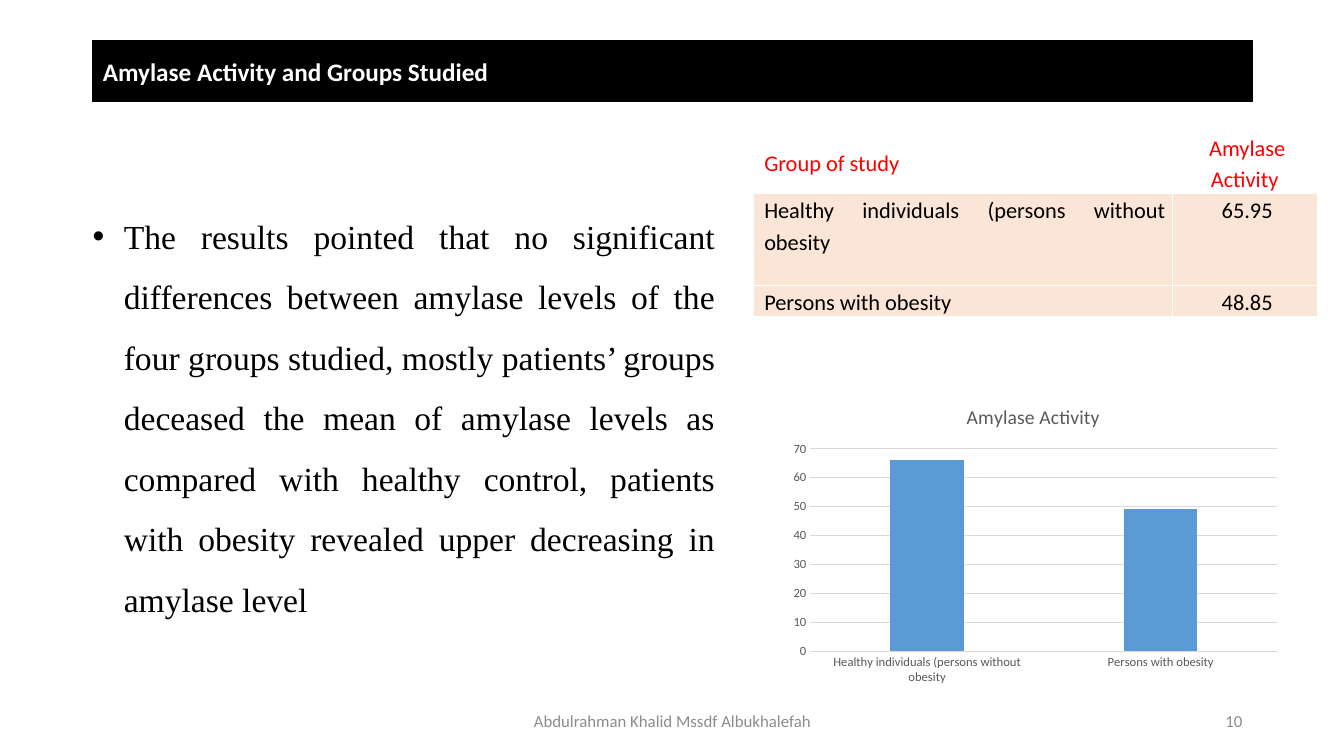
import pptx
import pptx.chart.data
import pptx.dml.color
import pptx.enum.chart
import pptx.enum.text
import pptx.oxml
import pptx.oxml.ns
import pptx.util
from dataclasses import dataclass

Inches = pptx.util.Inches
Pt = pptx.util.Pt
Align = pptx.enum.text.PP_ALIGN
Anchor = pptx.enum.text.MSO_ANCHOR


@dataclass(frozen=True)
class Theme:
    sans: str = "Calibri"
    serif: str = "Times New Roman"
    black: str = "000000"
    white: str = "FFFFFF"
    red: str = "FF0000"
    peach: str = "FBE5D6"
    blue: str = "5B9BD5"
    grid: str = "D9D9D9"
    label: str = "595959"
    footer: str = "8C8C8C"
    title_size: float = 18
    body_size: float = 24
    table_size: float = 16
    chart_title_size: float = 14
    chart_size: float = 10
    axis_size: float = 9
    footer_size: float = 12


def rgb(color):
    return pptx.dml.color.RGBColor.from_string(color)


def style_font(font, size, color, name, bold=False):
    font.size = Pt(size)
    font.color.rgb = rgb(color)
    font.name = name
    font.bold = bold


def style_line(line, color, width):
    line.color.rgb = rgb(color)
    line.width = Pt(width)


class SlideBuilder:
    def __init__(self, presentation, theme):
        self.theme = theme
        self.slide = presentation.slides.add_slide(presentation.slide_layouts[5])

    def title(self, text, box):
        heading = self.slide.shapes.title
        heading.left, heading.top, heading.width, heading.height = map(Inches, box)
        heading.fill.solid()
        heading.fill.fore_color.rgb = rgb(self.theme.black)
        style_line(heading.line, self.theme.black, 1)
        heading.text_frame.text = text
        heading.text_frame.vertical_anchor = Anchor.MIDDLE
        paragraph = heading.text_frame.paragraphs[0]
        paragraph.alignment = Align.LEFT
        style_font(paragraph.runs[0].font, self.theme.title_size,
                   self.theme.white, self.theme.sans, True)

    def text(self, text, box, align, size, color, font, anchor):
        frame = self.slide.shapes.add_textbox(*map(Inches, box)).text_frame
        frame.word_wrap = True
        frame.vertical_anchor = anchor
        frame.text = text
        paragraph = frame.paragraphs[0]
        paragraph.alignment = align
        style_font(paragraph.runs[0].font, size, color, font)
        return paragraph

    def footer(self, text, box, align):
        self.text(text, box, align, self.theme.footer_size, self.theme.footer,
                  self.theme.sans, Anchor.MIDDLE)

    def bullet(self, text, box):
        paragraph = self.text(text, box, Align.JUSTIFY, self.theme.body_size,
                              self.theme.black, self.theme.serif, Anchor.TOP)
        paragraph.line_spacing = 1.5
        properties = paragraph._p.get_or_add_pPr()
        properties.set("marL", str(Inches(0.31)))
        properties.set("indent", str(Inches(-0.31)))
        ns = pptx.oxml.ns.nsdecls("a")
        properties.append(pptx.oxml.parse_xml(f'<a:buFont {ns} typeface="Arial"/>'))
        properties.append(pptx.oxml.parse_xml(f'<a:buChar {ns} char="•"/>'))

    def table(self, rows, box, widths, heights):
        table = self.slide.shapes.add_table(
            len(rows), len(widths), *map(Inches, box)).table
        table.first_row = False
        table.horz_banding = False
        for column, width in zip(table.columns, widths):
            column.width = Inches(width)
        for row, height in zip(table.rows, heights):
            row.height = Inches(height)
        for r, values in enumerate(rows):
            for c, value in enumerate(values):
                self.cell(table.cell(r, c), value, r == 0, c == 0)

    def cell(self, cell, value, is_header, is_group):
        cell.margin_left = cell.margin_right = Inches(0.07)
        cell.margin_top = cell.margin_bottom = 0
        cell.vertical_anchor = Anchor.MIDDLE if is_header and is_group else Anchor.TOP
        if is_header:
            cell.fill.background()
        else:
            cell.fill.solid()
            cell.fill.fore_color.rgb = rgb(self.theme.peach)
        cell.text_frame.text = value
        paragraph = cell.text_frame.paragraphs[0]
        paragraph.line_spacing = 1.15
        paragraph._p.get_or_add_pPr().set("marL", str(Inches(0.04)))
        if not is_group:
            paragraph.alignment = Align.CENTER
        else:
            paragraph.alignment = Align.LEFT if is_header else Align.JUSTIFY
        style_font(paragraph.runs[0].font, self.theme.table_size,
                   self.theme.red if is_header else self.theme.black, self.theme.sans)
        for position, edge in enumerate(("lnL", "lnR", "lnT", "lnB")):
            cell._tc.get_or_add_tcPr().insert(position, pptx.oxml.parse_xml(
                f'<a:{edge} {pptx.oxml.ns.nsdecls("a")} w="{Pt(1)}"><a:solidFill>'
                f'<a:srgbClr val="{self.theme.white}"/></a:solidFill></a:{edge}>'))

    def column_chart(self, name, categories, values, box):
        theme = self.theme
        data = pptx.chart.data.CategoryChartData()
        data.categories = categories
        data.add_series(name, values)
        chart = self.slide.shapes.add_chart(
            pptx.enum.chart.XL_CHART_TYPE.COLUMN_CLUSTERED,
            *map(Inches, box), data).chart
        style_font(chart.font, theme.chart_size, theme.black, theme.sans)
        chart.has_legend = False
        chart.has_title = True
        chart.chart_title.include_in_layout = False
        chart.chart_title.text_frame.text = name
        style_font(chart.chart_title.text_frame.paragraphs[0].runs[0].font,
                   theme.chart_title_size, theme.label, theme.sans)
        plot = chart.plots[0]
        plot.vary_by_categories = False
        plot.gap_width = 219
        plot.overlap = -27
        columns = plot.series[0]
        columns.format.fill.solid()
        columns.format.fill.fore_color.rgb = rgb(theme.blue)
        for axis in (chart.category_axis, chart.value_axis):
            axis.major_tick_mark = pptx.enum.chart.XL_TICK_MARK.NONE
            axis.minor_tick_mark = pptx.enum.chart.XL_TICK_MARK.NONE
            style_font(axis.tick_labels.font, theme.axis_size, theme.label, theme.sans)
        style_line(chart.category_axis.format.line, theme.grid, 0.75)
        scale = chart.value_axis
        scale.minimum_scale, scale.maximum_scale, scale.major_unit = 0, 70, 10
        scale.format.line.fill.background()
        scale.has_major_gridlines = True
        style_line(scale.major_gridlines.format.line, theme.grid, 0.75)


def main():
    presentation = pptx.Presentation()
    presentation.slide_width = Inches(13.33)
    presentation.slide_height = Inches(7.5)
    builder = SlideBuilder(presentation, Theme())
    healthy = "Healthy individuals (persons without obesity"
    obese = "Persons with obesity"
    measure = "Amylase Activity "

    builder.title("Amylase Activity and Groups Studied", (0.92, 0.4, 11.5, 0.61))
    builder.footer("Abdulrahman Khalid Mssdf Albukhalefah",
                   (4.42, 6.95, 4.5, 0.4), Align.CENTER)
    builder.footer("10", (9.42, 6.95, 3, 0.4), Align.RIGHT)
    builder.bullet(
        "The results pointed that no significant differences between amylase levels "
        "of the four groups studied, mostly patients’ groups deceased the mean of "
        "amylase levels as compared with healthy control, patients with obesity "
        "revealed upper decreasing in amylase level", (0.82, 1.89, 6.37, 4.27))
    builder.table(
        [("Group of study", measure), (healthy, "65.95"), (obese, "48.85")],
        (7.47, 1.3, 5.6, 1.83), (4.16, 1.44), (0.62, 0.91, 0.3))
    builder.column_chart(measure, (healthy, obese), (66, 49), (7.77, 3.85, 5, 3))
    presentation.save("out.pptx")


if __name__ == "__main__":
    main()
